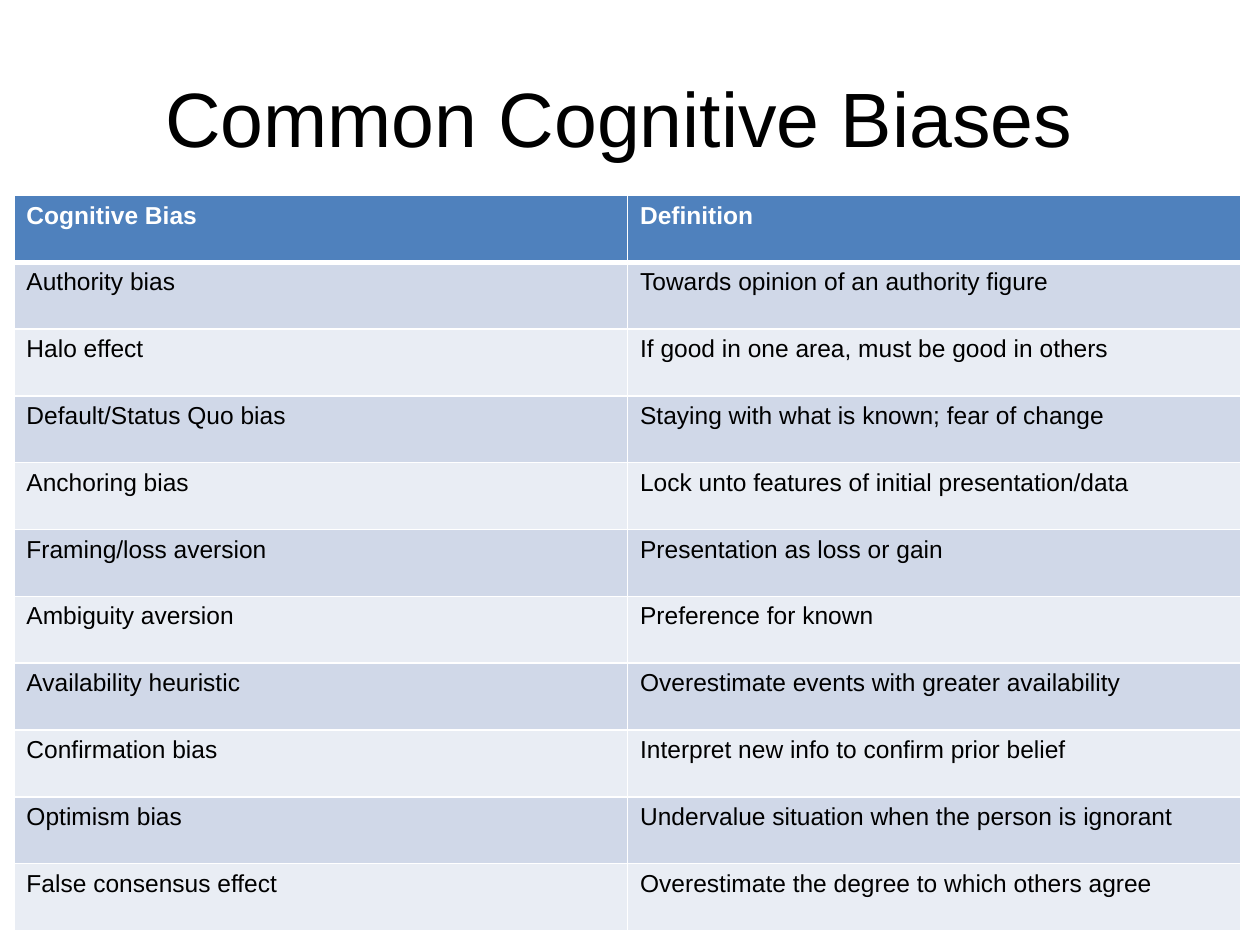
from lxml.etree import SubElement
from pptx import Presentation
from pptx.dml.color import RGBColor
from pptx.enum.text import MSO_ANCHOR, PP_ALIGN
from pptx.oxml.ns import qn
from pptx.util import Cm, Pt

WHITE = RGBColor(0xFF, 0xFF, 0xFF)
BLACK = RGBColor(0, 0, 0)
HEADER_BLUE = RGBColor(0x4F, 0x81, 0xBD)
BAND_DARK = RGBColor(0xD0, 0xD8, 0xE8)
BAND_LIGHT = RGBColor(0xE9, 0xED, 0xF4)

TITLE_FORMAT = {"name": "Arial", "size": Pt(44), "bold": False}
HEADER_FORMAT = {"name": "Arial", "size": Pt(14), "bold": True}
BODY_FORMAT = {"name": "Arial", "size": Pt(14), "bold": False}

BIASES = [
    ("Cognitive Bias", "Definition"),
    ("Authority bias", "Towards opinion of an authority figure"),
    ("Halo effect", "If good in one area, must be good in others"),
    ("Default/Status Quo bias", "Staying with what is known; fear of change"),
    ("Anchoring bias", "Lock unto features of initial presentation/data"),
    ("Framing/loss aversion", "Presentation as loss or gain"),
    ("Ambiguity aversion", "Preference for known"),
    ("Availability heuristic", "Overestimate events with greater availability"),
    ("Confirmation bias", "Interpret new info to confirm prior belief"),
    ("Optimism bias", "Undervalue situation when the person is ignorant"),
    ("False consensus effect", "Overestimate the degree to which others agree"),
]


def write_text(paragraph, text, font_format, color):
    """Add one formatted run to a paragraph."""
    run = paragraph.add_run()
    run.text = text
    for attribute, value in font_format.items():
        setattr(run.font, attribute, value)
    run.font.color.rgb = color


def set_borders(cell, widths):
    """Draw white cell borders from a dict of side and width in points."""
    properties = cell._tc.get_or_add_tcPr()
    for side, width in widths.items():
        border = SubElement(properties, qn(f"a:ln{side}"), w=str(Pt(width)))
        fill = SubElement(border, qn("a:solidFill"))
        SubElement(fill, qn("a:srgbClr"), val=str(WHITE))


def add_title(slide, left, top, width, height):
    """Place the centred slide title in the given box."""
    frame = slide.shapes.add_textbox(left, top, width, height).text_frame
    frame_format = {"word_wrap": True, "vertical_anchor": MSO_ANCHOR.MIDDLE}
    for attribute, value in frame_format.items():
        setattr(frame, attribute, value)
    heading = frame.paragraphs[0]
    heading.alignment = PP_ALIGN.CENTER
    write_text(heading, "Common Cognitive Biases ", TITLE_FORMAT, BLACK)


def add_bias_table(slide, left, top, width, height):
    """Fill the given box with the banded table of biases."""
    table = slide.shapes.add_table(
        len(BIASES), len(BIASES[0]), left, top, width, height
    ).table
    for row_index, entries in enumerate(BIASES):
        is_header = row_index == 0
        band = BAND_DARK if row_index % 2 else BAND_LIGHT
        font_format = HEADER_FORMAT if is_header else BODY_FORMAT
        borders = {
            "L": 1,
            "R": 1,
            "T": 3 if row_index == 1 else 1,
            "B": 3 if is_header else 1,
        }
        for column_index, entry in enumerate(entries):
            cell = table.cell(row_index, column_index)
            set_borders(cell, borders)
            cell.fill.solid()
            cell.fill.fore_color.rgb = HEADER_BLUE if is_header else band
            write_text(
                cell.text_frame.paragraphs[0],
                entry,
                font_format,
                WHITE if is_header else BLACK,
            )


def main():
    """Build the slide and save it."""
    presentation = Presentation()
    presentation.slide_width = Cm(25.4)
    presentation.slide_height = Cm(19.05)
    slide = presentation.slides.add_slide(presentation.slide_layouts[6])
    add_title(slide, Cm(1.27), Cm(0.76), Cm(22.86), Cm(3.18))
    add_bias_table(slide, Cm(0.28), Cm(3.94), Cm(24.74), Cm(14.82))
    presentation.save("out.pptx")


if __name__ == "__main__":
    main()
